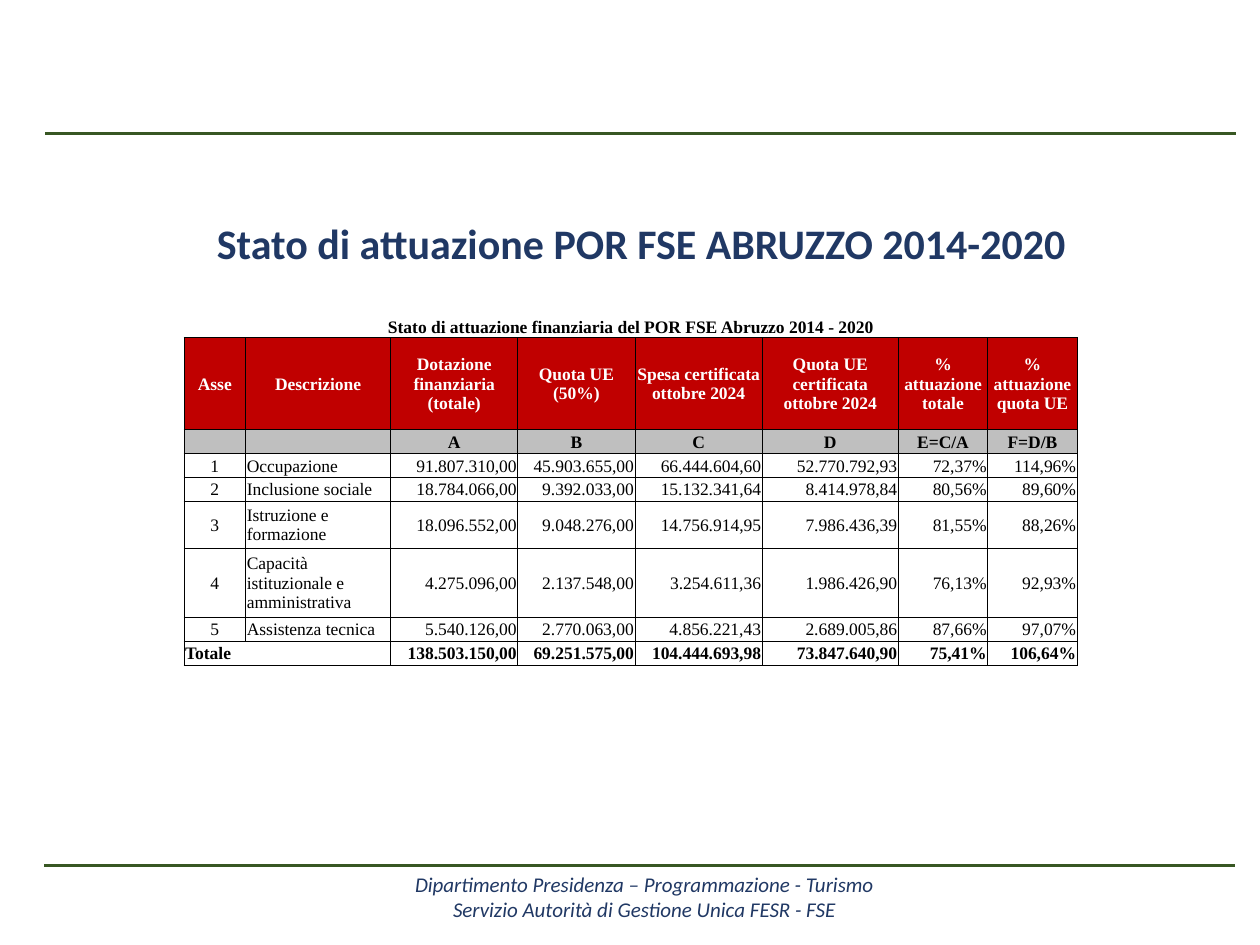
from dataclasses import dataclass
from typing import NamedTuple

from lxml import etree
from pptx import Presentation, util as u
from pptx.dml.color import RGBColor
from pptx.enum import shapes, text
from pptx.oxml.ns import qn

LEFT, CENTER, RIGHT = text.PP_ALIGN.LEFT, text.PP_ALIGN.CENTER, text.PP_ALIGN.RIGHT


@dataclass(frozen=True)
class Theme:
    navy: str = "203864"
    green: str = "385723"
    red: str = "C00000"
    grey: str = "BFBFBF"
    black: str = "000000"
    white: str = "FFFFFF"
    sans: str = "Calibri"
    serif: str = "Times New Roman"
    title_size: float = 24
    footer_size: float = 12
    table_size: float = 10
    rule_width: float = 2
    border_width: float = 0.5


class Box(NamedTuple):
    """Position and size in percent of the slide."""
    x: float
    y: float
    w: float
    h: float


class Rule(NamedTuple):
    x: float
    y: float
    w: float


class Style(NamedTuple):
    font: str
    size: float
    color: str
    bold: bool = False
    italic: bool = False
    align: text.PP_ALIGN = CENTER


class Label(NamedTuple):
    box: Box
    lines: list[str]
    style: Style
    inset: float = 0.05


T = Theme()
SLIDE_W, SLIDE_H = u.Inches(10), u.Inches(7.5)

RULES = [Rule(3.6, 14.13, 94.5), Rule(3.5, 91.6, 94.5)]
LABELS = [
    Label(Box(3.9, 92.2, 94.5, 7.6),
          ["Dipartimento Presidenza – Programmazione - Turismo",
           "Servizio Autorità di Gestione Unica FESR - FSE"],
          Style(T.sans, T.footer_size, T.navy, italic=True), inset=0),
    Label(Box(3.9, 22.4, 94, 6.67), ["Stato di attuazione POR FSE ABRUZZO 2014-2020"],
          Style(T.sans, T.title_size, T.navy, bold=True)),
]

COLUMNS = [4.9, 11.5, 10.1, 9.3, 10.1, 10.8, 7.1, 7.1]
LINE_ROW = 2.53
ROWS = [LINE_ROW, 9.75, *[LINE_ROW] * 3, 4.93, 7.35, *[LINE_ROW] * 2]
TABLE = Box(14.6, 33.2, sum(COLUMNS), sum(ROWS))
CAPTION = "Stato di attuazione finanziaria del POR FSE Abruzzo 2014 - 2020"
HEADINGS = ["Asse", "Descrizione", "Dotazione finanziaria (totale)", "Quota UE (50%)",
            "Spesa certificata ottobre 2024", "Quota UE certificata ottobre 2024",
            "% attuazione totale", "% attuazione quota UE"]
FORMULAS = ["", "", "A", "B", "C", "D", "E=C/A", "F=D/B"]
AXES = [
    ["1", "Occupazione", "91.807.310,00", "45.903.655,00", "66.444.604,60",
     "52.770.792,93", "72,37%", "114,96%"],
    ["2", "Inclusione sociale", "18.784.066,00", "9.392.033,00", "15.132.341,64",
     "8.414.978,84", "80,56%", "89,60%"],
    ["3", "Istruzione e formazione", "18.096.552,00", "9.048.276,00", "14.756.914,95",
     "7.986.436,39", "81,55%", "88,26%"],
    ["4", "Capacità istituzionale e amministrativa", "4.275.096,00", "2.137.548,00",
     "3.254.611,36", "1.986.426,90", "76,13%", "92,93%"],
    ["5", "Assistenza tecnica", "5.540.126,00", "2.770.063,00", "4.856.221,43",
     "2.689.005,86", "87,66%", "97,07%"],
]
TOTALS = ["Totale", "", "138.503.150,00", "69.251.575,00", "104.444.693,98",
          "73.847.640,90", "75,41%", "106,64%"]
DATA_ALIGN = [CENTER, LEFT] + [RIGHT] * 6
TOTAL_ALIGN = [LEFT, LEFT] + [RIGHT] * 6


def px(share: float) -> int:
    return round(SLIDE_W * share / 100)


def py(share: float) -> int:
    return round(SLIDE_H * share / 100)


def place(box: Box) -> tuple[int, int, int, int]:
    return px(box.x), py(box.y), px(box.w), py(box.h)


def style_paragraph(p, style: Style) -> None:
    p.alignment = style.align
    f = p.font
    f.name, f.size = style.font, u.Pt(style.size)
    f.bold, f.italic = style.bold, style.italic
    f.color.rgb = RGBColor.from_string(style.color)


def draw_rule(s, rule: Rule) -> None:
    y = py(rule.y)
    line = s.shapes.add_connector(shapes.MSO_CONNECTOR.STRAIGHT,
                                  px(rule.x), y, px(rule.x + rule.w), y)
    line.line.color.rgb = RGBColor.from_string(T.green)
    line.line.width = u.Pt(T.rule_width)
    etree.SubElement(line._element.spPr, qn("a:effectLst"))


def draw_label(s, label: Label) -> None:
    tf = s.shapes.add_textbox(*place(label.box)).text_frame
    tf.word_wrap = True
    tf.margin_top = tf.margin_bottom = u.Inches(label.inset)
    tf.text = "\n".join(label.lines)
    for p in tf.paragraphs:
        style_paragraph(p, label.style)


def add_borders(cell, sides: str) -> None:
    """Draw the named sides (L, R, T, B); must run before the cell's fill is set."""
    tc_pr = cell._tc.get_or_add_tcPr()
    for side in sides:
        ln = etree.SubElement(tc_pr, qn(f"a:ln{side}"), w=str(u.Pt(T.border_width)))
        fill = etree.SubElement(ln, qn("a:solidFill"))
        etree.SubElement(fill, qn("a:srgbClr"), val=T.black)


def fill_cell(cell, words: str, style: Style, fill: str | None = None,
              sides: str = "LRTB", anchor=text.MSO_ANCHOR.MIDDLE) -> None:
    cell.margin_left = cell.margin_right = cell.margin_top = u.Inches(0.01)
    cell.margin_bottom = 0
    cell.vertical_anchor = anchor
    add_borders(cell, sides)
    if fill:
        cell.fill.solid()
        cell.fill.fore_color.rgb = RGBColor.from_string(fill)
    else:
        cell.fill.background()
    p = cell.text_frame.paragraphs[0]
    if words:
        p.text = words
    else:  # keeps an empty cell from stretching its row
        etree.SubElement(p._p, qn("a:endParaRPr"), sz=str(round(style.size * 100)))
    style_paragraph(p, style)


def draw_table(s) -> None:
    frame = s.shapes.add_table(len(ROWS), len(COLUMNS), *place(TABLE))
    table = frame.table
    table.first_row = table.horz_banding = False
    for column, share in zip(table.columns, COLUMNS):
        column.width = px(share)
    for row, share in zip(table.rows, ROWS):
        row.height = py(share)

    plain = Style(T.serif, T.table_size, T.black)
    strong = plain._replace(bold=True)
    centered = [CENTER] * len(COLUMNS)
    for c in range(len(COLUMNS)):
        fill_cell(table.cell(0, c), "" if c else CAPTION, strong,
                  sides="B", anchor=text.MSO_ANCHOR.BOTTOM)
    body = [(HEADINGS, strong._replace(color=T.white), T.red, centered),
            (FORMULAS, strong, T.grey, centered),
            *[(axis, plain, None, DATA_ALIGN) for axis in AXES],
            (TOTALS, strong, None, TOTAL_ALIGN)]
    for r, (words, style, fill, aligns) in enumerate(body, start=1):
        for c, (word, align) in enumerate(zip(words, aligns)):
            fill_cell(table.cell(r, c), word, style._replace(align=align), fill)
    last = len(ROWS) - 1
    table.cell(0, 0).merge(table.cell(0, len(COLUMNS) - 1))
    table.cell(last, 0).merge(table.cell(last, 1))


def main() -> None:
    prs = Presentation()
    prs.slide_width, prs.slide_height = SLIDE_W, SLIDE_H
    s = prs.slides.add_slide(prs.slide_layouts[6])
    for rule in RULES:
        draw_rule(s, rule)
    for label in LABELS:
        draw_label(s, label)
    draw_table(s)
    prs.save("out.pptx")


if __name__ == "__main__":
    main()
